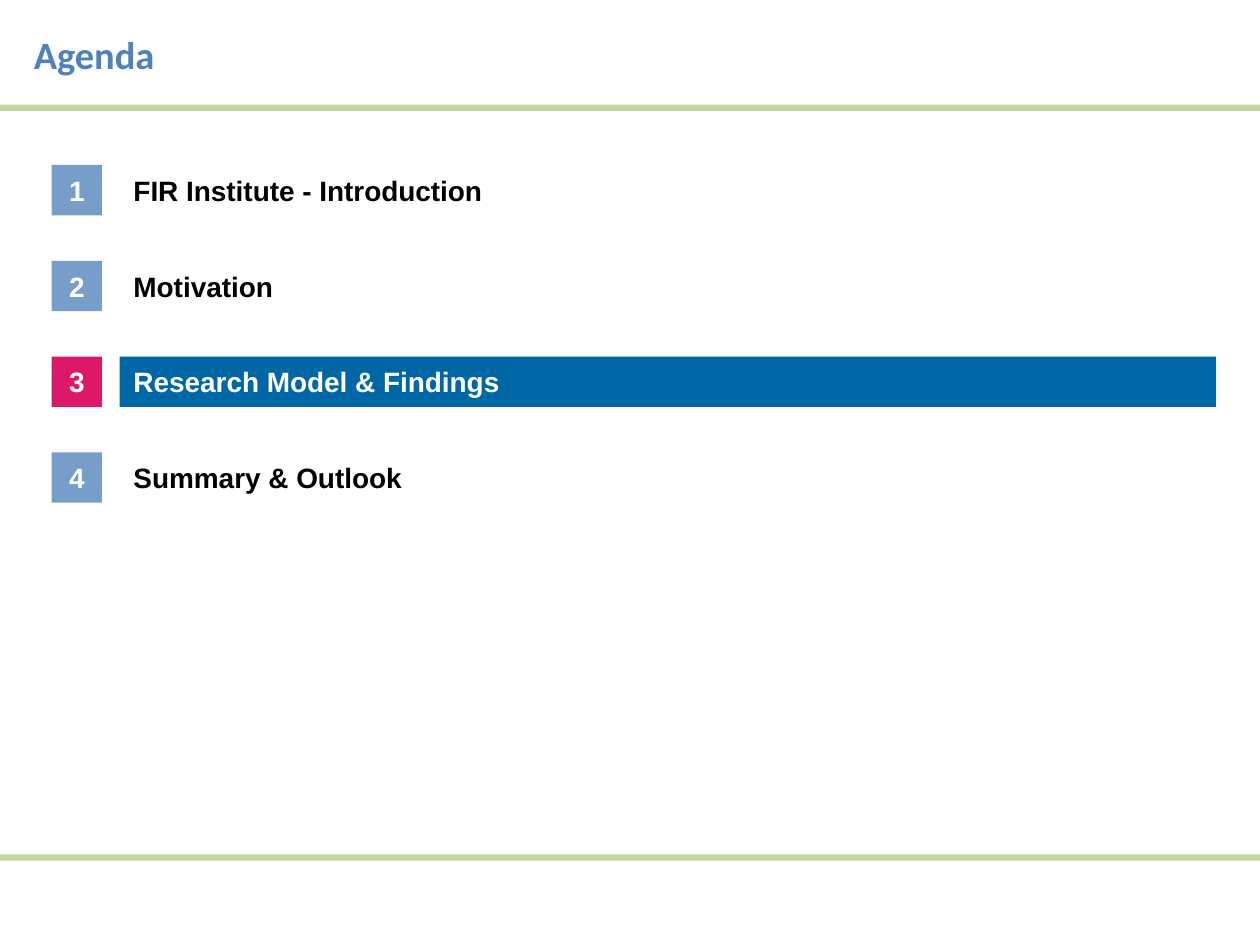
import pptx
import pptx.dml.color
import pptx.enum.shapes
import pptx.enum.text
import pptx.util

Inches = pptx.util.Inches
Align = pptx.enum.text.PP_ALIGN

TITLE = "Agenda"
TOPICS = [
    "FIR Institute - Introduction",
    "Motivation",
    "Research Model & Findings",
    "Summary & Outlook",
]
CURRENT_TOPIC = 3

RULE_TOPS = [0.83, 6.78]
FIRST_TOP, ROW_STEP, ROW_HEIGHT = 1.31, 0.76, 0.4
NUMBER_LEFT, TOPIC_LEFT, TOPIC_WIDTH = 0.41, 0.95, 8.7

TITLE_FONT = {"name": "Calibri", "size": pptx.util.Pt(22), "bold": True}
AGENDA_FONT = {"name": "Arial", "size": pptx.util.Pt(16), "bold": True}


def paint(color_format, color):
    color_format.rgb = pptx.dml.color.RGBColor.from_string(color)


def add_bar(slide, box, color):
    bar = slide.shapes.add_shape(
        pptx.enum.shapes.MSO_SHAPE.RECTANGLE, *map(Inches, box)
    )
    bar.shadow.inherit = False
    bar.fill.solid()
    paint(bar.fill.fore_color, color)
    bar.line.fill.background()
    return bar


def add_label(slide, box):
    return slide.shapes.add_textbox(*map(Inches, box))


def write(holder, text, font, color, align, side=0.1, edge=0):
    frame = holder.text_frame
    frame_format = {
        "word_wrap": True,
        "vertical_anchor": pptx.enum.text.MSO_ANCHOR.MIDDLE,
        "margin_left": Inches(side),
        "margin_right": Inches(side),
        "margin_top": Inches(edge),
        "margin_bottom": Inches(edge),
    }
    for key, value in frame_format.items():
        setattr(frame, key, value)
    paragraph = frame.paragraphs[0]
    paragraph.alignment = align
    run = paragraph.add_run()
    run.text = text
    for key, value in font.items():
        setattr(run.font, key, value)
    paint(run.font.color, color)


def main():
    deck = pptx.Presentation()
    deck.slide_width, deck.slide_height = Inches(10), Inches(7.5)
    slide = deck.slides.add_slide(deck.slide_layouts[6])

    for top in RULE_TOPS:
        add_bar(slide, (0, top, 10, 0.05), "C3D69B")

    heading = add_label(slide, (0.17, 0.01, 9.67, 0.84))
    write(heading, TITLE, TITLE_FONT, "4F81BD", Align.LEFT, edge=0.05)

    for number, topic in enumerate(TOPICS, start=1):
        top = FIRST_TOP + (number - 1) * ROW_STEP
        topic_box = (TOPIC_LEFT, top, TOPIC_WIDTH, ROW_HEIGHT)
        if number == CURRENT_TOPIC:
            entry = add_bar(slide, topic_box, "0067A6")
            topic_color, number_fill = "FFFFFF", "DC1969"
        else:
            entry = add_label(slide, topic_box)
            topic_color, number_fill = "000000", "779EC9"
        write(entry, topic, AGENDA_FONT, topic_color, Align.LEFT, side=0.11)

        badge = add_bar(slide, (NUMBER_LEFT, top, ROW_HEIGHT, ROW_HEIGHT), number_fill)
        write(badge, str(number), AGENDA_FONT, "FFFFFF", Align.CENTER, side=0)

    deck.save("out.pptx")


if __name__ == "__main__":
    main()
